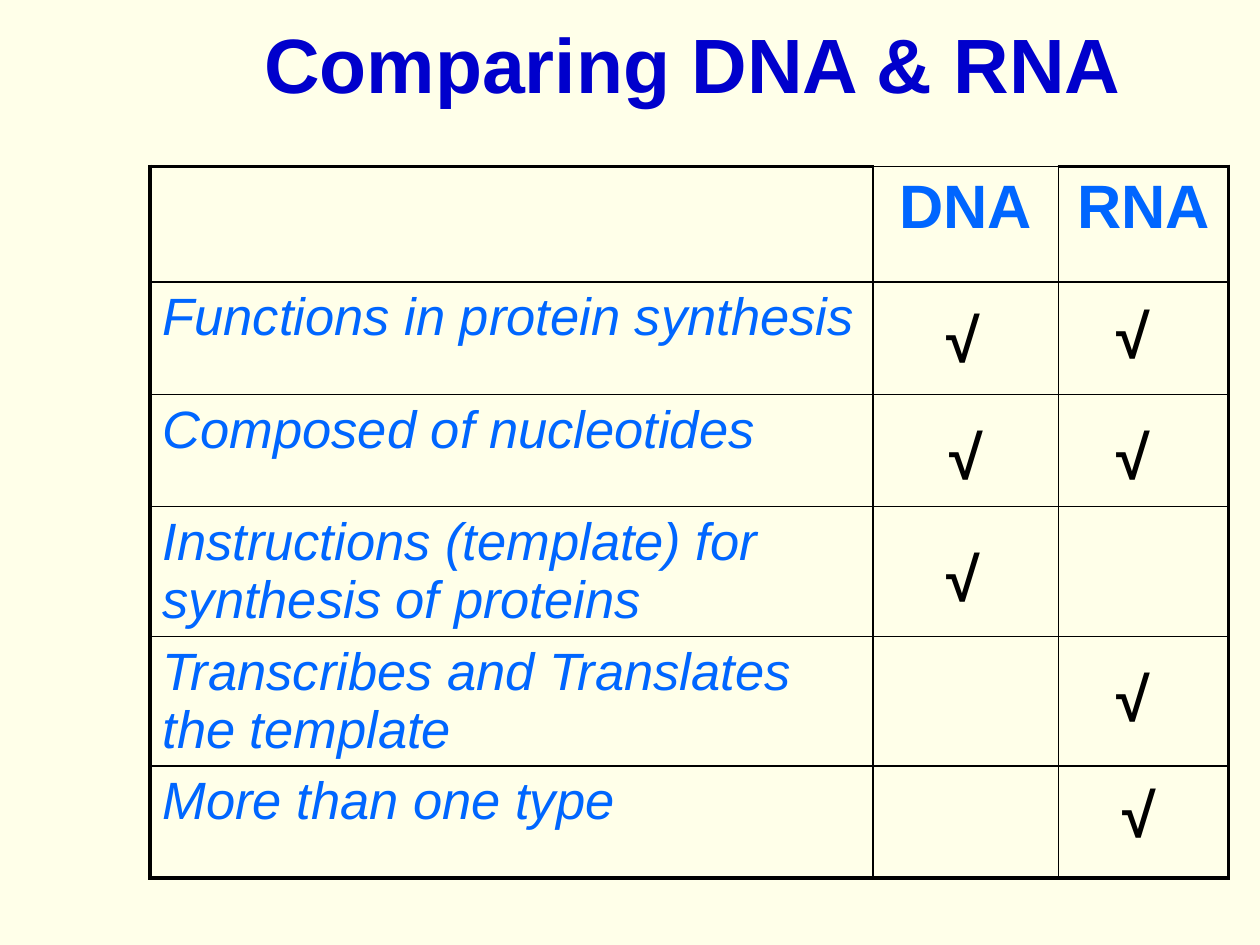
from pptx import Presentation
from pptx.dml.color import RGBColor
from pptx.enum.text import MSO_ANCHOR, PP_ALIGN
from pptx.oxml import parse_xml
from pptx.oxml.ns import nsdecls
from pptx.util import Inches, Pt

CREAM = RGBColor(0xFF, 0xFF, 0xE9)
NAVY = RGBColor(0x00, 0x00, 0xCC)
BLUE = RGBColor(0x00, 0x66, 0xFF)
BLACK = RGBColor(0x00, 0x00, 0x00)

FONT = "Arial"
THIN, THICK = 1, 2.25
COLUMN_WIDTHS = (5.74, 1.47, 1.35)
ROW_HEIGHTS = (0.92,) + (0.89,) * 5
ROWS = (
    ("", "DNA", "RNA"),
    ("Functions in protein synthesis", "", ""),
    ("Composed of nucleotides", "", ""),
    ("Instructions (template) for synthesis of proteins", "", ""),
    ("Transcribes and Translates the template", "", ""),
    ("More than one type", "", ""),
)
CHECK_POSITIONS = (
    (7.41, 2.34), (8.76, 2.31),
    (7.44, 3.27), (8.76, 3.27),
    (7.41, 4.24),
    (8.76, 5.19),
    (8.81, 6.11),
)


def style_font(paragraph, size, color, bold=True, italic=False):
    """Set the look of every run in a paragraph."""
    for run in paragraph.runs:
        font = run.font
        font.name, font.size = FONT, Pt(size)
        font.bold, font.italic = bold, italic
        font.color.rgb = color


def set_borders(cell, widths):
    """Draw solid black cell borders, with widths keyed by side."""
    properties = cell._tc.get_or_add_tcPr()
    for side in "LRTB":
        properties.append(parse_xml(
            f'<a:ln{side} {nsdecls("a")} w="{Pt(widths[side])}">'
            f'<a:solidFill><a:srgbClr val="{BLACK}"/></a:solidFill></a:ln{side}>'))


def add_label(slide, text, box, size, color, align, anchor, wrap):
    """Place one line of bold text in a box."""
    shape = slide.shapes.add_textbox(*map(Inches, box))
    frame = shape.text_frame
    frame.word_wrap = wrap
    frame.vertical_anchor = anchor
    frame.text = text
    paragraph = frame.paragraphs[0]
    paragraph.alignment = align
    style_font(paragraph, size, color)


def add_comparison_table(slide, box):
    """Build the table of DNA and RNA features."""
    last_row, last_column = len(ROWS) - 1, len(COLUMN_WIDTHS) - 1
    table = slide.shapes.add_table(
        len(ROWS), len(COLUMN_WIDTHS), *map(Inches, box)).table
    table.first_row = table.horz_banding = False
    for column, width in zip(table.columns, COLUMN_WIDTHS):
        column.width = Inches(width)
    for row, height in zip(table.rows, ROW_HEIGHTS):
        row.height = Inches(height)
    for r, texts in enumerate(ROWS):
        for c, text in enumerate(texts):
            cell = table.cell(r, c)
            set_borders(cell, {
                "L": THICK if c == 0 else THIN,
                "R": THICK if c == last_column else THIN,
                "T": THICK if r == 0 and c != 1 else THIN,
                "B": THICK if r == last_row else THIN,
            })
            cell.fill.background()
            cell.text = text
            paragraph = cell.text_frame.paragraphs[0]
            if r == 0:
                paragraph.alignment = PP_ALIGN.CENTER
                style_font(paragraph, 35, BLUE)
            else:
                style_font(paragraph, 30, BLUE, bold=False, italic=True)


def add_checks(slide, positions):
    """Place a check mark at each position."""
    for left, top in positions:
        add_label(slide, "√", (left, top, 0.58, 0.68), 35, BLACK,
                  PP_ALIGN.LEFT, MSO_ANCHOR.TOP, False)


def main():
    """Build and save the slide."""
    presentation = Presentation()
    presentation.slide_width, presentation.slide_height = Inches(10), Inches(7.5)
    slide = presentation.slides.add_slide(presentation.slide_layouts[6])
    slide.background.fill.solid()
    slide.background.fill.fore_color.rgb = CREAM
    add_comparison_table(
        slide, (1.19, 1.32, sum(COLUMN_WIDTHS), sum(ROW_HEIGHTS)))
    add_checks(slide, CHECK_POSITIONS)
    add_label(slide, "Comparing DNA & RNA", (1, 0.12, 9, 0.75), 44, NAVY,
              PP_ALIGN.CENTER, MSO_ANCHOR.MIDDLE, True)
    presentation.save("out.pptx")


if __name__ == "__main__":
    main()
